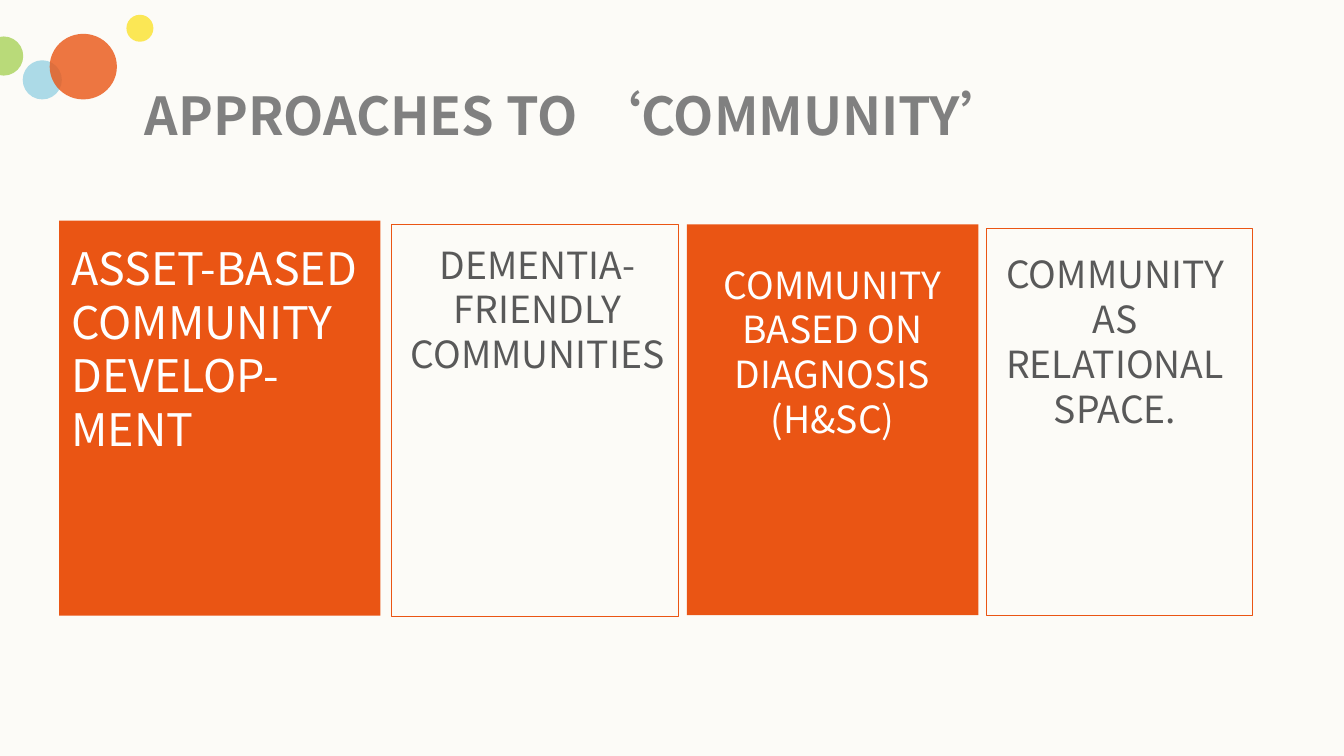
from dataclasses import dataclass

from lxml import etree
from pptx import Presentation
from pptx.dml.color import RGBColor
from pptx.enum.shapes import MSO_SHAPE
from pptx.enum.text import MSO_ANCHOR, MSO_AUTO_SIZE, PP_ALIGN
from pptx.oxml.ns import qn
from pptx.util import Cm, Pt

RECTANGLE, OVAL = MSO_SHAPE.RECTANGLE, MSO_SHAPE.OVAL
LEFT, CENTER = PP_ALIGN.LEFT, PP_ALIGN.CENTER
TOP = MSO_ANCHOR.TOP
NO_AUTOFIT = MSO_AUTO_SIZE.NONE


@dataclass(frozen=True)
class Theme:
    font: str = "Noto Sans CJK SC"
    paper: str = "FCFBF7"
    orange: str = "EA5514"
    yellow: str = "FBE22D"
    green: str = "A9D25A"
    blue: str = "98D2E3"
    white: str = "FFFFFF"
    dark: str = "595959"
    grey: str = "808080"
    title_size: int = 28
    lead_size: int = 24
    body_size: int = 20
    line_spacing: float = 1.2


theme = Theme()


def write(frame, text, size, color, align, bold=False):
    frame.text = text
    frame.word_wrap = True
    frame.auto_size = NO_AUTOFIT
    frame.vertical_anchor = TOP
    frame.margin_left = frame.margin_right = frame.margin_top = frame.margin_bottom = 0
    for paragraph in frame.paragraphs:
        paragraph.alignment = align
        paragraph.line_spacing = Pt(size * theme.line_spacing)
        for run in paragraph.runs:
            run.font.name = theme.font
            run.font.size = Pt(size)
            run.font.bold = bold
            run.font.color.rgb = RGBColor.from_string(color)


def add_filled(kind, box, color):
    shape = slide.shapes.add_shape(kind, *map(Cm, box))
    shape.shadow.inherit = False
    shape.fill.solid()
    shape.fill.fore_color.rgb = RGBColor.from_string(color)
    shape.line.fill.background()
    return shape


prs = Presentation()
prs.slide_width, prs.slide_height = Cm(25.4), Cm(14.29)
slide = prs.slides.add_slide(prs.slide_layouts[5])
slide.background.fill.solid()
slide.background.fill.fore_color.rgb = RGBColor.from_string(theme.paper)

title = slide.shapes.title
title.left, title.top, title.width, title.height = map(Cm, (2.74, 1.57, 18.19, 1.19))
write(title.text_frame, "APPROACHES TO ‘COMMUNITY’", theme.title_size, theme.grey, LEFT, bold=True)

approaches = [
    ("ASSET-BASED COMMUNITY DEVELOP-MENT", True, theme.lead_size, LEFT,
     (1.12, 4.17, 6.07, 7.47), (1.35, 4.55, 5.84, 4.95)),
    ("DEMENTIA-FRIENDLY COMMUNITIES", False, theme.body_size, CENTER,
     (7.39, 4.24, 5.44, 7.42), (7.47, 4.57, 5.38, 2.57)),
    ("COMMUNITY BASED ON DIAGNOSIS\n(H&SC)", True, theme.body_size, CENTER,
     (12.98, 4.24, 5.51, 7.39), (13.26, 4.95, 4.95, 3.43)),
    ("COMMUNITY AS RELATIONAL SPACE.", False, theme.body_size, CENTER,
     (18.64, 4.32, 5.03, 7.32), (18.75, 4.75, 4.65, 3.43)),
]
for wording, solid, size, align, panel_box, label_box in approaches:
    panel = add_filled(RECTANGLE, panel_box, theme.orange if solid else theme.paper)
    if not solid:
        panel.line.color.rgb = RGBColor.from_string(theme.orange)
        panel.line.width = Pt(0.5)
    label = slide.shapes.add_textbox(*map(Cm, label_box))
    write(label.text_frame, wording, size, theme.white if solid else theme.dark, align)

bubbles = [
    ((2.39, 0.28, 0.51, 0.51), theme.yellow),
    ((-0.3, 0.69, 0.74, 0.74), theme.green),
    ((0.43, 1.14, 0.74, 0.74), theme.blue),
    ((0.94, 0.64, 1.27, 1.24), theme.orange),
]
for bubble_box, color in bubbles:
    bubble = add_filled(OVAL, bubble_box, color)
    tint = bubble.fill._xPr.find(qn("a:solidFill"))[0]
    etree.SubElement(tint, qn("a:alpha")).set("val", "80000")

prs.save("out.pptx")
